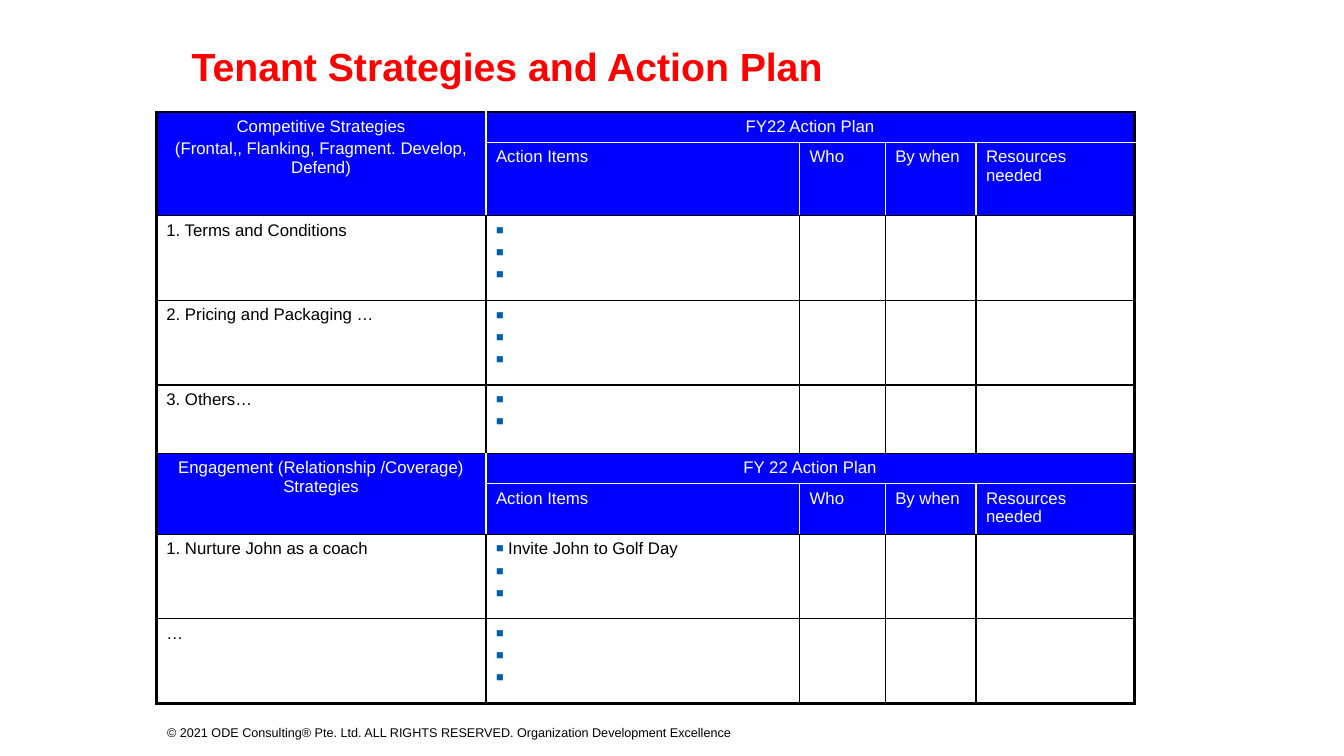
from dataclasses import dataclass

from lxml.etree import SubElement
from pptx import Presentation
from pptx.dml.color import RGBColor
from pptx.enum.text import MSO_ANCHOR, MSO_AUTO_SIZE, PP_ALIGN
from pptx.oxml.ns import qn
from pptx.table import Table, _Cell
from pptx.text.text import TextFrame, _Paragraph
from pptx.util import Inches, Pt

BLACK = RGBColor(0x00, 0x00, 0x00)
WHITE = RGBColor(0xFF, 0xFF, 0xFF)
BLUE = RGBColor(0x00, 0x00, 0xFF)
RED = RGBColor(0xFF, 0x00, 0x00)
BULLET_BLUE = RGBColor(0x00, 0x5E, 0xAF)

FONT = "Arial"
COLUMN_WIDTHS = [3.27, 3.11, 0.85, 0.9, 1.57]
COLUMN_HEADINGS = ["Action Items", "Who", "By when", "Resources needed"]
LAST_COLUMN = len(COLUMN_WIDTHS) - 1


@dataclass
class Strategy:
    name: str
    actions: list[str]
    height: float = 0.84


@dataclass
class Section:
    heading: list[str]
    plan: str
    heading_height: float
    strategies: list[Strategy]


# A bullet only shows beside text, so an open action holds one space
OPEN = " "
SECTIONS = [
    Section(
        ["Competitive Strategies", "(Frontal,, Flanking, Fragment. Develop, Defend)"],
        "FY22 Action Plan",
        0.73,
        [
            Strategy("1. Terms and Conditions", [OPEN] * 3),
            Strategy("2. Pricing and Packaging …", [OPEN] * 3),
            Strategy("3. Others…", [OPEN] * 2, 0.68),
        ],
    ),
    Section(
        ["Engagement (Relationship /Coverage) Strategies"],
        "FY 22 Action Plan",
        0.5,
        [
            Strategy("1. Nurture John as a coach", ["Invite John to Golf Day", OPEN, OPEN]),
            Strategy("…", [OPEN] * 3),
        ],
    ),
]


def add_bullet(para: _Paragraph) -> None:
    properties = para._p.get_or_add_pPr()
    properties.set("marL", str(Inches(0.12)))
    properties.set("indent", str(Inches(-0.12)))
    color = SubElement(properties, qn("a:buClr"))
    SubElement(color, qn("a:srgbClr"), val=str(BULLET_BLUE))
    SubElement(properties, qn("a:buSzPct"), val="75000")
    SubElement(properties, qn("a:buFont"), typeface=FONT)
    SubElement(properties, qn("a:buChar"), char="■")


def write(frame: TextFrame, lines: list[str], *, size: float = 12,
          color: RGBColor = BLACK, bold: bool = False,
          align: PP_ALIGN = PP_ALIGN.LEFT, bullets: bool = False,
          line_spacing: float = 1.0) -> None:
    for index, line in enumerate(lines):
        para = frame.add_paragraph() if index else frame.paragraphs[0]
        if bullets:
            add_bullet(para)
        para.alignment = align
        para.line_spacing = line_spacing
        para.space_before = Pt(0.2 * size if index else 0)
        span = para.add_run()
        span.text = line
        span.font.name = FONT
        span.font.size = Pt(size)
        span.font.bold = bold
        span.font.color.rgb = color


def add_border(cell: _Cell, side: str, color: RGBColor, width: float) -> None:
    properties = cell._tc.get_or_add_tcPr()
    line = SubElement(properties, qn(f"a:ln{side}"), w=str(Pt(width)))
    fill = SubElement(line, qn("a:solidFill"))
    SubElement(fill, qn("a:srgbClr"), val=str(color))


def draw_borders(table: Table, header_rows: set[int]) -> None:
    """Heavy black frame, thin black grid, white lines inside the headers."""
    last_row = len(table.rows) - 1
    plan_rows = {row for row in header_rows if row + 1 in header_rows}
    for row in range(last_row + 1):
        for column in range(LAST_COLUMN + 1):
            cell = table.cell(row, column)
            bottom, right = row, column
            if cell.is_merge_origin:
                bottom += cell.span_height - 1
                right += cell.span_width - 1
            for side, edge, last in (("L", column, LAST_COLUMN), ("R", right + 1, LAST_COLUMN),
                                     ("T", row, last_row), ("B", bottom + 1, last_row)):
                vertical = side in "LR"
                if vertical:
                    inside_merge = row in plan_rows and 1 < edge <= last
                    white = row in header_rows
                else:
                    inside_merge = column == 0 and edge - 1 in plan_rows
                    white = column > 0 and edge - 1 in plan_rows
                if inside_merge:
                    continue
                outer = edge in (0, last + 1)
                color = WHITE if white and not outer else BLACK
                add_border(cell, side, color, 2.25 if outer else 1)


def fill_section(table: Table, section: Section, top: int) -> None:
    # Two header rows
    for row, height in enumerate((0.3, section.heading_height), top):
        table.rows[row].height = Inches(height)
    table.cell(top, 0).merge(table.cell(top + 1, 0))
    table.cell(top, 1).merge(table.cell(top, LAST_COLUMN))
    write(table.cell(top, 0).text_frame, section.heading, color=WHITE, align=PP_ALIGN.CENTER)
    write(table.cell(top, 1).text_frame, [section.plan], color=WHITE, align=PP_ALIGN.CENTER)
    for column, heading in enumerate(COLUMN_HEADINGS, 1):
        write(table.cell(top + 1, column).text_frame, [heading], color=WHITE)
    # One row for each strategy
    for row, strategy in enumerate(section.strategies, top + 2):
        table.rows[row].height = Inches(strategy.height)
        write(table.cell(row, 0).text_frame, [strategy.name])
        write(table.cell(row, 1).text_frame, strategy.actions, bullets=True)


def main() -> None:
    deck = Presentation()
    deck.slide_width, deck.slide_height = Inches(13.33), Inches(7.5)
    page = deck.slides.add_slide(deck.slide_layouts[5])

    # Title
    title = page.shapes.title
    title.left, title.top = Inches(1.9), Inches(0.37)
    title.width, title.height = Inches(9), Inches(0.62)
    frame = title.text_frame
    frame.margin_left = frame.margin_right = frame.margin_top = frame.margin_bottom = 0
    frame.vertical_anchor = MSO_ANCHOR.MIDDLE
    frame.auto_size = MSO_AUTO_SIZE.NONE
    frame.word_wrap = True
    write(frame, ["Tenant Strategies and Action Plan"], size=28, color=RED,
          bold=True, line_spacing=0.9)

    # Action plan table
    row_count = sum(2 + len(section.strategies) for section in SECTIONS)
    table = page.shapes.add_table(row_count, len(COLUMN_WIDTHS), Inches(1.55), Inches(1.11),
                                  Inches(sum(COLUMN_WIDTHS)), Inches(5.86)).table
    table.first_row = table.horz_banding = False
    for column, width in zip(table.columns, COLUMN_WIDTHS):
        column.width = Inches(width)
    header_rows = set()
    top = 0
    for section in SECTIONS:
        fill_section(table, section, top)
        header_rows |= {top, top + 1}
        top += 2 + len(section.strategies)

    # Borders come before fills in the cell properties
    draw_borders(table, header_rows)
    for row in range(row_count):
        for column in range(len(COLUMN_WIDTHS)):
            cell = table.cell(row, column)
            cell.fill.solid()
            cell.fill.fore_color.rgb = BLUE if row in header_rows else WHITE
            if not cell.text_frame.text:
                end = SubElement(cell.text_frame.paragraphs[0]._p, qn("a:endParaRPr"))
                end.set("sz", "1200")

    # Copyright line
    box = page.shapes.add_textbox(Inches(1.56), Inches(7.14), Inches(7.37), Inches(0.25))
    box.text_frame.word_wrap = True
    box.text_frame.vertical_anchor = MSO_ANCHOR.MIDDLE
    write(box.text_frame, ["© 2021 ODE Consulting® Pte. Ltd. ALL RIGHTS RESERVED. "
                           "Organization Development Excellence"], size=9)

    deck.save("out.pptx")


if __name__ == "__main__":
    main()
